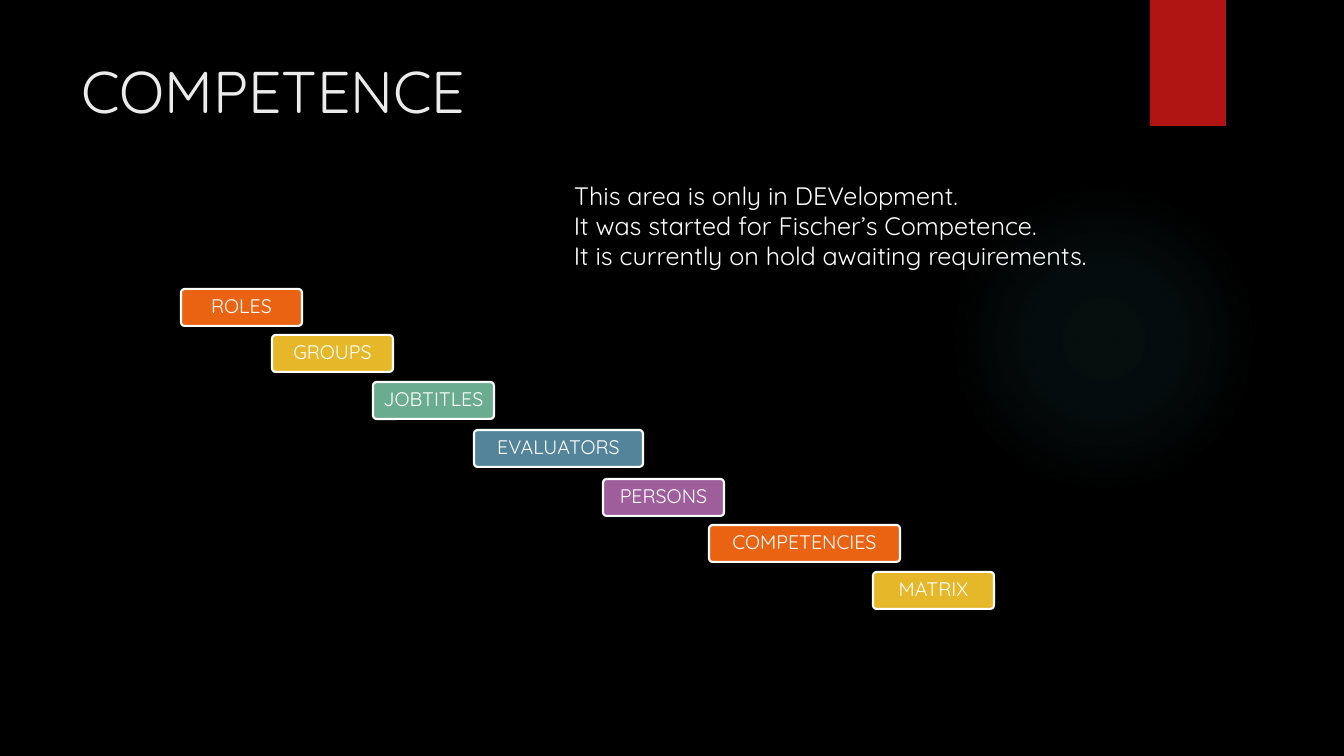
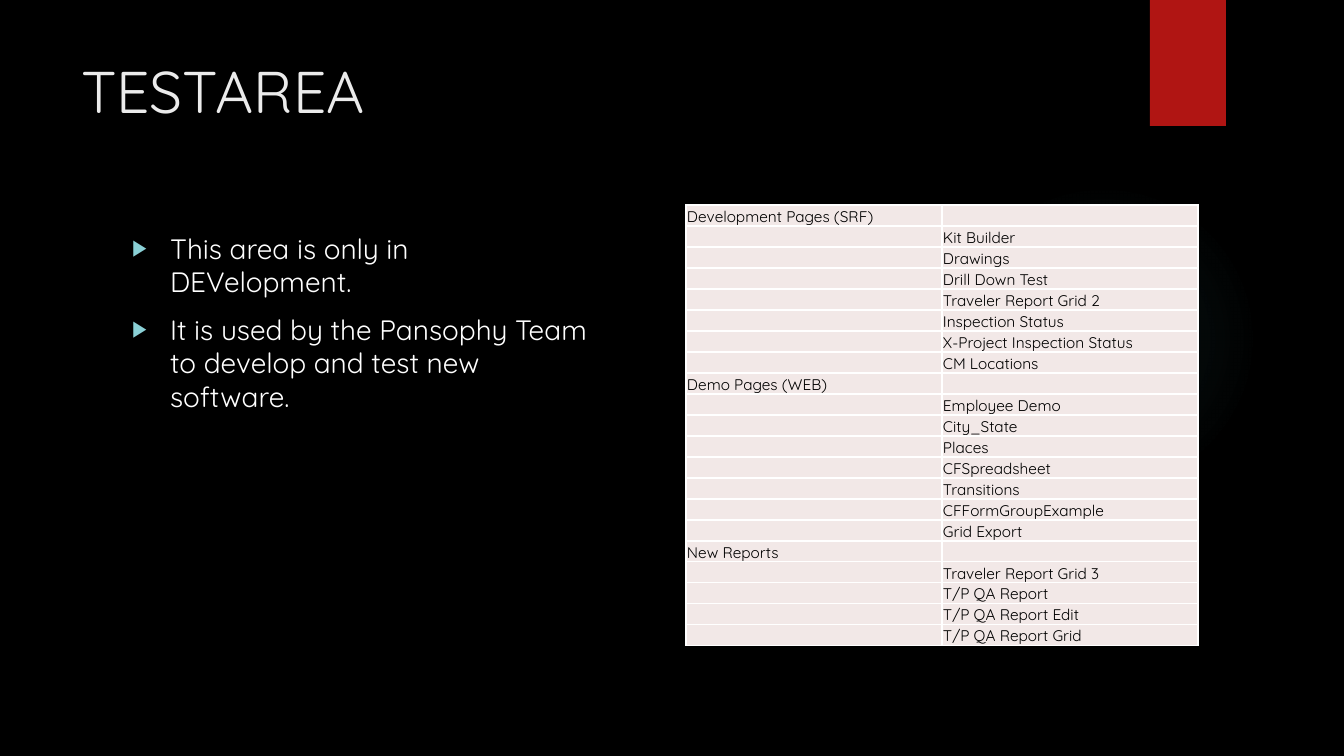
from lxml import etree
from pptx import Presentation
from pptx import util as u
from pptx.dml import color
from pptx.enum import shapes, text
from pptx.oxml import ns, parse_xml

FONT = "Quicksand"
BLACK, WHITE, TITLE = "000000", "FFFFFF", "EBEBEB"
RED, GLOW, BULLET, CELL = "B01513", "50B9C1", "8AD0D6", "F2E8E7"
ORANGE, YELLOW, GREEN, BLUE, PURPLE = "EA6312", "E6B729", "6AAC90", "54849A", "9E5E9B"

STEPS = [
    ("ROLES", 181, 289, 121, ORANGE),
    ("GROUPS", 272, 335, 121, YELLOW),
    ("JOBTITLES", 373, 382, 121, GREEN),
    ("EVALUATORS", 474, 430, 169, BLUE),
    ("PERSONS", 603, 479, 121, PURPLE),
    ("COMPETENCIES", 709, 525, 191, ORANGE),
    ("MATRIX", 873, 572, 121, YELLOW),
]

PAGES = {
    "Development Pages (SRF)": [
        "Kit Builder", "Drawings", "Drill Down Test", "Traveler Report Grid 2",
        "Inspection Status", "X-Project Inspection Status", "CM Locations"],
    "Demo Pages (WEB)": [
        "Employee Demo", "City_State", "Places", "CFSpreadsheet",
        "Transitions", "CFFormGroupExample", "Grid Export"],
    "New Reports": [
        "Traveler Report Grid 3", "T/P QA Report", "T/P QA Report Edit",
        "T/P QA Report Grid"],
}


def px(n):
    """Turn slide px (1344 across) into EMU."""
    return u.Emu(round(n * 914400 / 100.8))


def rgb(value):
    return color.RGBColor.from_string(value)


def add_xml(parent, tag, **attrs):
    return etree.SubElement(parent, ns.qn(tag), attrs)


def write(tf, lines, size=18, ink=WHITE, align=text.PP_ALIGN.LEFT,
          spacing=None, before=0, anchor=text.MSO_ANCHOR.TOP, insets=None):
    """Fill a text frame, one paragraph per line; insets are l, t, r, b in px."""
    tf.word_wrap = True
    tf.vertical_anchor = anchor
    if insets:
        (tf.margin_left, tf.margin_top,
         tf.margin_right, tf.margin_bottom) = map(px, insets)
    for i, line in enumerate(lines):
        p = tf.add_paragraph() if i else tf.paragraphs[0]
        p.alignment = align
        p.space_before = u.Pt(before if i else 0)
        if spacing:
            p.line_spacing = spacing
        r = p.add_run()
        r.text = line
        r.font.name, r.font.size = FONT, u.Pt(size)
        r.font.color.rgb = rgb(ink)


class Deck:
    def __init__(self):
        self.prs = Presentation()
        self.prs.slide_width, self.prs.slide_height = px(1344), px(756)
        self.s = None

    def new_slide(self, title, layout):
        self.s = self.prs.slides.add_slide(self.prs.slide_layouts[layout])
        fill = self.s.background.fill
        fill.solid()
        fill.fore_color.rgb = rgb(BLACK)
        self.glow()
        self.shape(shapes.MSO_SHAPE.RECTANGLE, 1150, 0, 76, 126, RED)
        tf = self.place(self.s.shapes.title, 71, 50, 1037, 154)
        write(tf, [title], size=42, ink=TITLE)

    def place(self, sp, x, y, w, h):
        """Move a placeholder and return its text frame."""
        sp.left, sp.top, sp.width, sp.height = map(px, (x, y, w, h))
        sp.text_frame.auto_size = text.MSO_AUTO_SIZE.NONE
        return sp.text_frame

    def shape(self, kind, x, y, w, h, fill=None, line=None):
        sp = self.s.shapes.add_shape(kind, *map(px, (x, y, w, h)))
        sp.shadow.inherit = False
        if fill:
            sp.fill.solid()
            sp.fill.fore_color.rgb = rgb(fill)
        else:
            sp.fill.background()
        if line:
            sp.line.color.rgb = rgb(line)
            sp.line.width = u.Pt(1.5)
        else:
            sp.line.fill.background()
        return sp

    def glow(self):
        """Draw the faint round light that fades out toward its rim."""
        spPr = self.shape(shapes.MSO_SHAPE.OVAL, 949, 184, 310, 310)._element.spPr
        stops = "".join(
            f'<a:gs pos="{pos}000"><a:srgbClr val="{GLOW}">'
            f'<a:alpha val="{alpha}000"/></a:srgbClr></a:gs>'
            for pos, alpha in ((0, 7), (36, 6), (69, 0), (100, 0)))
        grad = parse_xml(
            f'<a:gradFill {ns.nsdecls("a")} rotWithShape="1"><a:gsLst>{stops}</a:gsLst>'
            '<a:path path="circle"><a:fillToRect l="50000" t="50000" r="50000" '
            'b="50000"/></a:path></a:gradFill>')
        spPr.replace(spPr.find(ns.qn("a:noFill")), grad)

    def step(self, label, x, y, w, fill):
        sp = self.shape(shapes.MSO_SHAPE.ROUNDED_RECTANGLE, x, y, w, 37, fill, WHITE)
        sp.adjustments[0] = 0.1
        write(sp.text_frame, [label], size=14, align=text.PP_ALIGN.CENTER,
              spacing=0.9, anchor=text.MSO_ANCHOR.MIDDLE, insets=(3, 2, 3, 2))

    def note(self, lines, x, y, w, h):
        sp = self.s.shapes.add_textbox(*map(px, (x, y, w, h)))
        write(sp.text_frame, lines)

    def bullets(self, lines, x, y, w, h):
        tf = self.place(self.s.placeholders[1], x, y, w, h)
        write(tf, lines, size=20, before=10)
        for p in tf.paragraphs:
            pPr = p._p.get_or_add_pPr()
            pPr.set("marL", str(px(38)))
            pPr.set("indent", str(px(-38)))
            add_xml(add_xml(pPr, "a:buClr"), "a:srgbClr", val=BULLET)
            add_xml(pPr, "a:buSzPct", val="80000")
            add_xml(pPr, "a:buChar", char="▶")

    def table(self, rows, x, y, col_w, row_h):
        cols = len(rows[0])
        tbl = self.s.shapes.add_table(len(rows), cols, *map(
            px, (x, y, col_w * cols, row_h * len(rows)))).table
        tbl.first_row = tbl.horz_banding = False
        for row, values in zip(tbl.rows, rows):
            row.height = px(row_h)
            for cell, value in zip(row.cells, values):
                self.cell(cell, value)

    def cell(self, cell, value):
        (cell.margin_left, cell.margin_top,
         cell.margin_right, cell.margin_bottom) = map(px, (1, 1, 1, 0))
        cell.vertical_anchor = text.MSO_ANCHOR.BOTTOM
        tcPr = cell._tc.get_or_add_tcPr()
        for side in "LRTB":
            ln = add_xml(tcPr, f"a:ln{side}", w=str(u.Pt(1)))
            add_xml(add_xml(ln, "a:solidFill"), "a:srgbClr", val=WHITE)
        cell.fill.solid()
        cell.fill.fore_color.rgb = rgb(CELL)
        if value:
            write(cell.text_frame, [value], size=11, ink=BLACK)
        else:
            add_xml(cell.text_frame.paragraphs[0]._p, "a:endParaRPr", sz="1100")


def main():
    deck = Deck()

    deck.new_slide("COMPETENCE", layout=5)
    for step in STEPS:
        deck.step(*step)
    deck.note(["This area is only in DEVelopment.",
               "It was started for Fischer’s Competence.",
               "It is currently on hold awaiting requirements."], 564, 175, 561, 102)

    deck.new_slide("TESTAREA", layout=1)
    deck.bullets(["This area is only in DEVelopment.",
                  "It is used by the Pansophy Team to develop and test new software."],
                 122, 226, 480, 242)
    rows = []
    for group, pages in PAGES.items():
        rows += [(group, "")] + [("", page) for page in pages]
    deck.table(rows, 686, 205, col_w=256, row_h=21)

    deck.prs.save("out.pptx")


if __name__ == "__main__":
    main()
